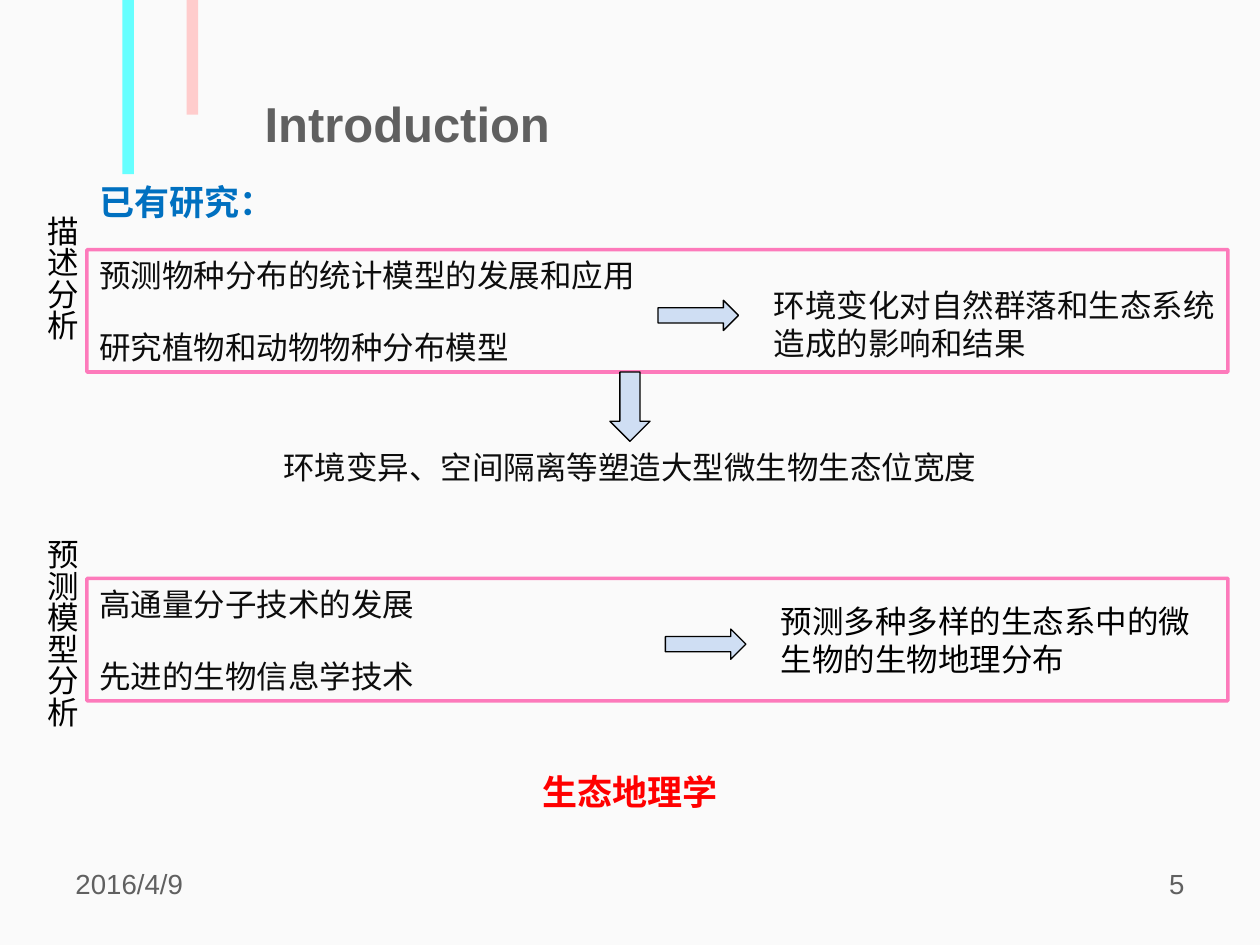
from pptx import Presentation
from pptx.dml.color import RGBColor
from pptx.enum.shapes import MSO_SHAPE
from pptx.enum.text import MSO_ANCHOR, MSO_AUTO_SIZE, PP_ALIGN
from pptx.oxml.ns import qn
from pptx.util import Pt
from lxml.etree import SubElement

COLORS = {
    "back": "FAFAFA", "cyan": "66FFFF", "rose": "FFCCCC", "gray": "606060",
    "blue": "0070C0", "ink": "0D0D0D", "black": "000000", "red": "FF0000",
    "arrow": "CFDEF3", "frame": "FF3399",
}


def color(name):
    """Return the named colour."""
    return RGBColor.from_string(COLORS[name])


def style(frame, text, size, tint, bold=False, align=PP_ALIGN.LEFT,
          anchor=MSO_ANCHOR.TOP):
    """Fill a text frame and format its runs."""
    frame.text = text
    frame.word_wrap = True
    frame.auto_size = MSO_AUTO_SIZE.SHAPE_TO_FIT_TEXT
    frame.vertical_anchor = anchor
    for para in frame.paragraphs:
        para.alignment = align
        for run in para.runs:
            run.font.name = "Arial"
            run.font.size = Pt(size)
            run.font.bold = bold
            run.font.color.rgb = color(tint)


def label(slide, box, text, size=18, tint="ink", **look):
    """Add a text box and return its frame."""
    frame = slide.shapes.add_textbox(*map(Pt, box)).text_frame
    style(frame, text, size, tint, **look)
    return frame


def shape(slide, kind, box, fill=None, line=None, width=0.75):
    """Add a flat preset shape."""
    item = slide.shapes.add_shape(kind, *map(Pt, box))
    item.shadow.inherit = False
    if fill:
        item.fill.solid()
        item.fill.fore_color.rgb = color(fill)
    else:
        item.fill.background()
    if line:
        item.line.color.rgb = color(line)
        item.line.width = Pt(width)
    else:
        item.line.fill.background()
    return item


def heading(slide, box):
    """Place the two bars and the title, relative to the title box."""
    left, top, wide, high = box
    for shift, tall, tint in ((74, 99.5, "cyan"), (37.3, 65.5, "rose")):
        shape(slide, MSO_SHAPE.RECTANGLE, (left - shift, 0, 6.5, tall), tint)
    title = slide.shapes.title
    title.left, title.top, title.width, title.height = map(Pt, box)
    style(title.text_frame, "Introduction", 28, "gray", bold=True)


def side(slide, box, text):
    """Place a vertical label beside a panel."""
    frame = label(slide, box, text, tint="black", align=PP_ALIGN.CENTER)
    frame._txBody.bodyPr.set("vert", "eaVert")


def panel(slide, box, causes, result, spot, tint):
    """Place a framed pair of causes, an arrow and the result."""
    left, top, wide, high = box
    for text, drop in zip(causes, (0, high - 29)):
        label(slide, (left, top + drop, 352, 29), text,
              anchor=MSO_ANCHOR.MIDDLE)
    over, down = spot
    label(slide, (left + over, top + down, 452, 51), result, tint=tint)
    shape(slide, MSO_SHAPE.RIGHT_ARROW,
          (left + over - 59, top + 29, 46, 17.3), "arrow", "black")
    frame = shape(slide, MSO_SHAPE.RECTANGLE, box, None, "frame", 2)
    tone = frame.line._ln.find(".//" + qn("a:srgbClr"))
    SubElement(tone, qn("a:alpha")).set("val", "64000")


def footer(slide, box):
    """Place the date and the slide number at the ends of a strip."""
    left, top, wide, high = box
    part = 168
    label(slide, (left, top, part, high), "2016/4/9", 15.8, "gray")
    label(slide, (left + wide - part, top, part, high), "5", 15.8, "gray",
          align=PP_ALIGN.RIGHT)


def main():
    """Build the slide and save it."""
    deck = Presentation()
    deck.slide_width, deck.slide_height = Pt(720), Pt(540)
    slide = deck.slides.add_slide(deck.slide_layouts[5])
    slide.background.fill.solid()
    slide.background.fill.fore_color.rgb = color("back")

    heading(slide, (144, 49.7, 232.6, 41))
    label(slide, (49.7, 99.4, 128, 31.5), "已有研究：", 20, "blue", bold=True)
    side(slide, (13.7, 116, 36, 124.5), "描述分析")
    panel(slide, (49.7, 142.6, 652, 70),
          ("预测物种分布的统计模型的发展和应用", "研究植物和动物物种分布模型"),
          "环境变化对自然群落和生态系统\n造成的影响和结果", (385.3, 17.3), "ink")
    shape(slide, MSO_SHAPE.DOWN_ARROW, (348.5, 212.6, 23, 39.6),
          "arrow", "black")
    label(slide, (80, 252.7, 560, 29),
          "环境变异、空间隔离等塑造大型微生物生态位宽度",
          align=PP_ALIGN.CENTER)
    side(slide, (13.7, 301, 36, 124.5), "预测模型分析")
    panel(slide, (49.7, 330.5, 652, 70),
          ("高通量分子技术的发展", "先进的生物信息学技术"),
          "预测多种多样的生态系中的微\n生物的生物地理分布", (389.5, 10), "black")
    label(slide, (210.5, 437, 299, 31.5), "生态地理学", 20, "red",
          bold=True, align=PP_ALIGN.CENTER)
    footer(slide, (36, 491.8, 648, 37.4))
    deck.save("out.pptx")


if __name__ == "__main__":
    main()
